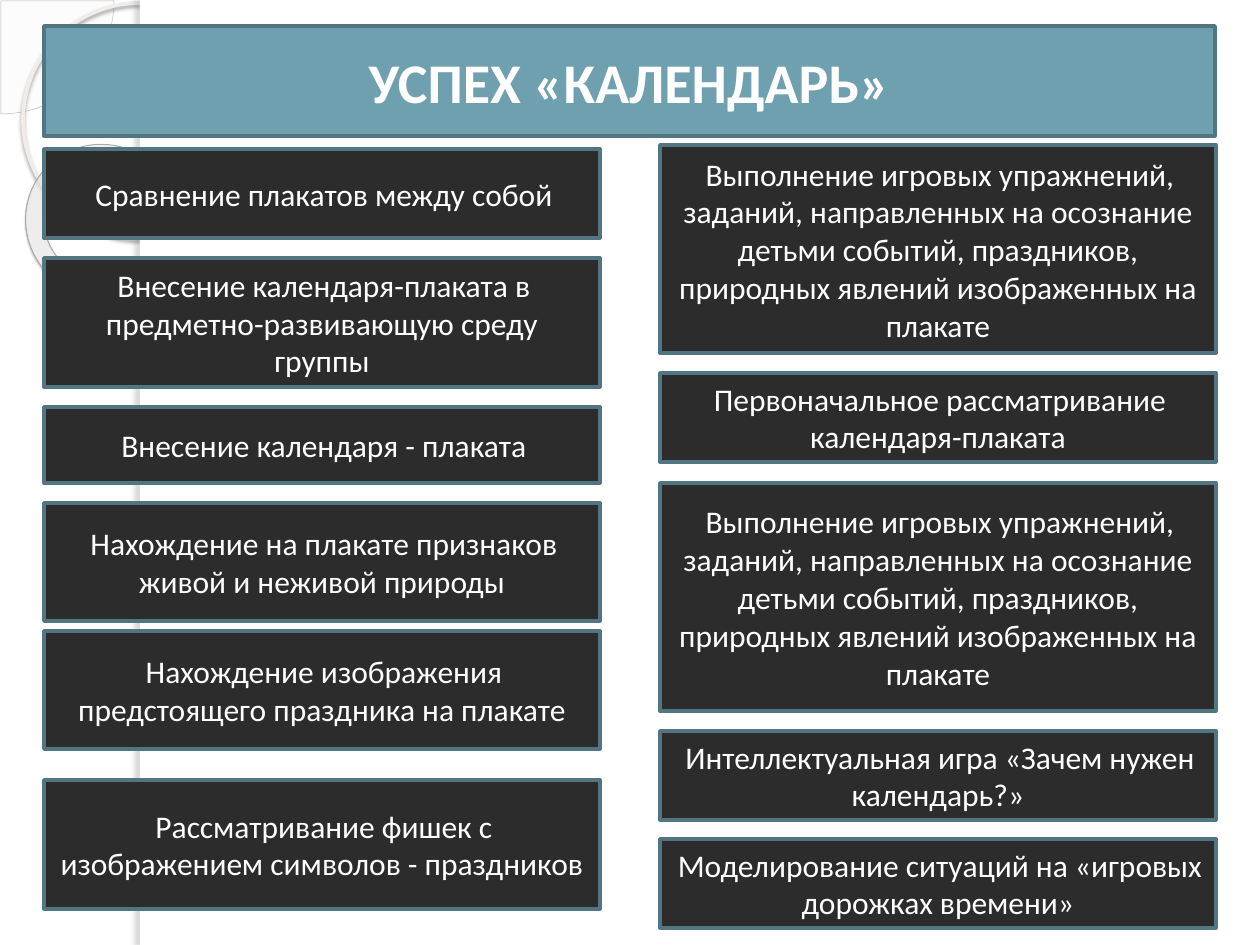
"""Build the calendar project slide with two columns of activity boxes."""
from pptx import Presentation
from pptx.dml.color import RGBColor
from pptx.enum.shapes import MSO_SHAPE as SHAPE
from pptx.enum.text import MSO_ANCHOR as ANCHOR, MSO_AUTO_SIZE as FIT, PP_ALIGN as ALIGN
from pptx.oxml import parse_xml
from pptx.oxml.ns import nsdecls, qn
from pptx.util import Pt

COLORS = {
    "white": "FFFFFF", "teal": "6EA0B0", "edge": "517682", "dark": "2C2C2C",
    "pie": "F8F8F7", "pie_line": "B7B4B0", "ring": "EFECEA", "ring_shadow": "9E9B99",
    "donut_line": "ACA8A5", "donut_shadow": "4F4D4C", "strip_shadow": "696867",
    "grad_in": "FAFAF9", "grad_mid": "FDFDFC", "grad_out": "C0B9B3",
}
PX = 914400 / 126
FONT = "Calibri"
GAMES = ("Выполнение игровых упражнений, заданий, направленных на осознание детьми "
         "событий, праздников, природных явлений изображенных на плакате")
COLUMNS = {
    44: [
        (149, 89, "Сравнение плакатов между собой"),
        (258, 129, "Внесение календаря-плаката в предметно-развивающую среду группы"),
        (407, 76, "Внесение календаря - плаката"),
        (503, 118, "Нахождение на плакате признаков живой и неживой природы"),
        (631, 118, "Нахождение изображения предстоящего праздника на плакате"),
        (780, 129, "Рассматривание фишек с изображением символов - праздников"),
    ],
    660: [
        (145, 208, GAMES),
        (373, 89, "Первоначальное рассматривание календаря-плаката"),
        (483, 228, GAMES),
        (731, 89, "Интеллектуальная игра «Зачем нужен календарь?»"),
        (839, 89, "Моделирование ситуаций на «игровых дорожках времени»"),
    ],
}


def px(n):
    return round(n * PX)


def rgb(name):
    return RGBColor.from_string(COLORS[name])


def color_xml(name, alpha):
    return f'<a:srgbClr val="{COLORS[name]}"><a:alpha val="{alpha * 1000}"/></a:srgbClr>'


class Deck:
    def __init__(self):
        self.prs = Presentation()
        self.prs.slide_width, self.prs.slide_height = px(1260), px(945)
        self.s = self.prs.slides.add_slide(self.prs.slide_layouts[5])

    def paint(self, sp, fill, line, width):
        if fill:
            sp.fill.solid()
            sp.fill.fore_color.rgb = rgb(fill)
        else:
            sp.fill.background()
        if line:
            sp.line.color.rgb = rgb(line)
            sp.line.width = Pt(width)
        else:
            sp.line.fill.background()

    def shape(self, kind, box, fill=None, line=None, width=1, adjust=()):
        sp = self.s.shapes.add_shape(kind, *map(px, box))
        sp.shadow.inherit = False
        for i, value in enumerate(adjust):
            sp.adjustments[i] = value
        self.paint(sp, fill, line, width)
        return sp

    def shadow(self, sp, color, alpha, blur, dist, angle):
        effects = sp._element.spPr.find(qn("a:effectLst"))
        effects.append(parse_xml(
            f'<a:outerShdw {nsdecls("a")} blurRad="{Pt(blur)}" dist="{Pt(dist)}" '
            f'dir="{angle * 60000}" algn="ctr" rotWithShape="0">'
            f'{color_xml(color, alpha)}</a:outerShdw>'))

    def transparency(self, sp, alpha):
        color = sp._element.spPr.find(qn("a:solidFill"))[0]
        color.append(parse_xml(f'<a:alpha {nsdecls("a")} val="{alpha * 1000}"/>'))

    def radial(self, sp, stops, rect):
        gs = "".join(f'<a:gs pos="{pos * 1000}">{color_xml(name, alpha)}</a:gs>'
                     for pos, name, alpha in stops)
        sides = " ".join(f'{side}="{value * 1000}"' for side, value in zip("ltrb", rect))
        spPr = sp._element.spPr
        spPr.replace(spPr.find(qn("a:noFill")), parse_xml(
            f'<a:gradFill {nsdecls("a")} rotWithShape="1"><a:gsLst>{gs}</a:gsLst>'
            f'<a:path path="circle"><a:fillToRect {sides}/></a:path></a:gradFill>'))

    def label(self, sp, text, size, bold=False):
        tf = sp.text_frame
        tf.text = text
        tf.word_wrap = True
        tf.auto_size = FIT.NONE
        tf.vertical_anchor = ANCHOR.MIDDLE
        p = tf.paragraphs[0]
        p.alignment = ALIGN.CENTER
        p.font.name, p.font.size, p.font.bold = FONT, Pt(size), bold
        p.font.color.rgb = rgb("white")
        return p

    def title(self, box, text):
        sp = self.s.shapes.title
        self.s.shapes._spTree.append(sp._element)
        sp.left, sp.top, sp.width, sp.height = map(px, box)
        self.paint(sp, "teal", "edge", 2)
        self.label(sp, text, 32, bold=True)

    def activity(self, box, text):
        sp = self.shape(SHAPE.RECTANGLE, box, "dark", "edge", 2)
        pPr = self.label(sp, text, 18)._p.get_or_add_pPr()
        pPr.set("marL", "0")
        pPr.set("indent", str(px(4)))

    def backdrop(self):
        pie = self.shape(SHAPE.PIE, (-112, -112, 226, 226), "pie", "pie_line", 0.25, (0, 54.02))
        self.transparency(pie, 33)
        ring = self.shape(SHAPE.OVAL, (23, 3, 234, 234), None, "ring", 2.15)
        self.shadow(ring, "ring_shadow", 85, 2, 2, 90)
        donut = self.shape(SHAPE.DONUT, (25, 145, 155, 152), None, "donut_line", 0.58, (0.12,))
        donut.rotation = 38.6
        self.radial(donut, [(0, "grad_in", 70), (70, "grad_mid", 55), (100, "grad_out", 60)],
                    (-408, -50, 508, 150))
        self.shadow(donut, "donut_shadow", 35, 1, 1.2, 75)
        self.shape(SHAPE.RECTANGLE, (140, 0, 1120, 945), "white")
        strip = self.shape(SHAPE.RECTANGLE, (140, 0, 10, 945), "white")
        self.shadow(strip, "strip_shadow", 25, 3, 3, 180)


def main():
    deck = Deck()
    deck.backdrop()
    deck.title((44, 26, 1171, 110), "УСПЕХ «КАЛЕНДАРЬ»")
    for left, boxes in COLUMNS.items():
        for top, height, text in boxes:
            deck.activity((left, top, 556, height), text)
    deck.prs.save("out.pptx")


if __name__ == "__main__":
    main()
